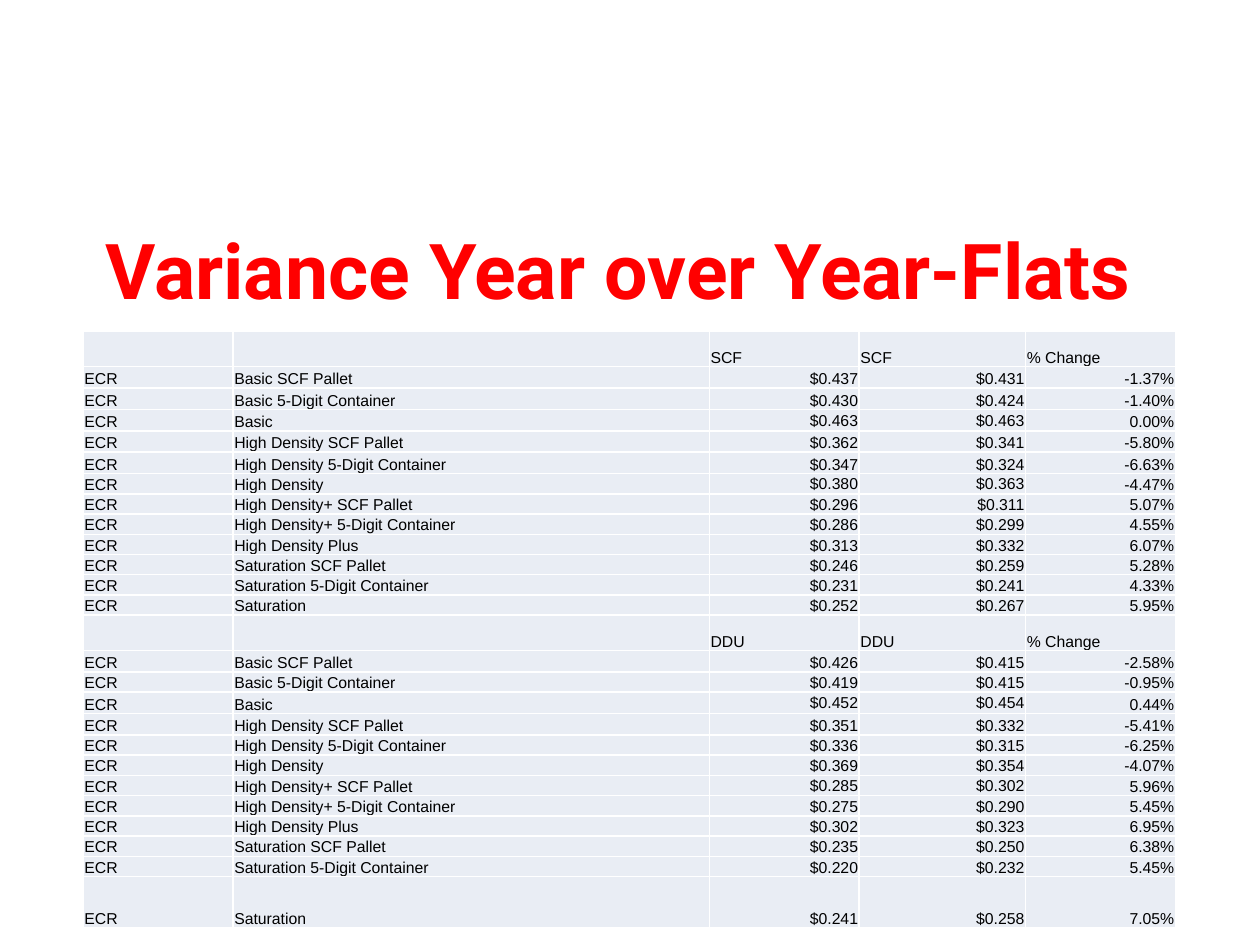
from dataclasses import dataclass

from lxml import etree
from pptx import Presentation
from pptx.dml.color import RGBColor
from pptx.enum.text import MSO_ANCHOR, PP_ALIGN
from pptx.oxml.ns import qn
from pptx.util import Inches, Pt

LEFT, CENTER, RIGHT = PP_ALIGN.LEFT, PP_ALIGN.CENTER, PP_ALIGN.RIGHT
MIDDLE, BOTTOM = MSO_ANCHOR.MIDDLE, MSO_ANCHOR.BOTTOM


@dataclass(frozen=True)
class Theme:
    title_font: str = "Roboto"
    title_size: int = 44
    title_color: str = "FF0000"
    body_font: str = "Arial"
    body_size: int = 9
    body_color: str = "000000"
    cell_fill: str = "E9EDF4"
    border_color: str = "FFFFFF"
    border_width: int = 1


THEME = Theme()

# Rate categories, in the order used by both sections
CATEGORIES = [
    "Basic SCF Pallet", "Basic 5-Digit Container", "Basic",
    "High Density SCF Pallet", "High Density 5-Digit Container", "High Density",
    "High Density+ SCF Pallet", "High Density+ 5-Digit Container", "High Density Plus",
    "Saturation SCF Pallet", "Saturation 5-Digit Container", "Saturation",
]
MIDDLE_PRICED = {"Basic", "High Density", "High Density+ SCF Pallet"}

# Entry point: (last year's price, this year's price) for each category
PRICES = {
    "SCF": [(0.437, 0.431), (0.430, 0.424), (0.463, 0.463), (0.362, 0.341),
            (0.347, 0.324), (0.380, 0.363), (0.296, 0.311), (0.286, 0.299),
            (0.313, 0.332), (0.246, 0.259), (0.231, 0.241), (0.252, 0.267)],
    "DDU": [(0.426, 0.415), (0.419, 0.415), (0.452, 0.454), (0.351, 0.332),
            (0.336, 0.315), (0.369, 0.354), (0.285, 0.302), (0.275, 0.290),
            (0.302, 0.323), (0.235, 0.250), (0.220, 0.232), (0.241, 0.258)],
}

COLUMN_WIDTHS = [1.19, 3.78, 1.19, 1.32, 1.19]
HEADER, TALL, SHORT, LAST = 0.28, 0.17, 0.15, 0.41
ROW_HEIGHTS = ([HEADER] + [TALL] * 5 + [SHORT] * 7
               + [HEADER, TALL, SHORT, TALL, TALL] + [SHORT] * 7 + [LAST])


def style_font(font, name, size, color, bold=False):
    font.name = name
    font.size = Pt(size)
    font.bold = bold
    font.color.rgb = RGBColor.from_string(color)


def add_title(slide, text):
    title = slide.shapes.add_textbox(Inches(0.16), Inches(1.61), Inches(9.5), Inches(1.04))
    frame = title.text_frame
    frame.word_wrap = True
    frame.vertical_anchor = MIDDLE
    paragraph = frame.paragraphs[0]
    paragraph.text = text
    paragraph.alignment = CENTER
    style_font(paragraph.font, THEME.title_font, THEME.title_size, THEME.title_color, bold=True)


def add_borders(cell):
    properties = cell._tc.get_or_add_tcPr()
    for position, side in enumerate(("lnL", "lnR", "lnT", "lnB")):
        line = etree.Element(qn(f"a:{side}"), w=str(Pt(THEME.border_width)))
        fill = etree.SubElement(line, qn("a:solidFill"))
        etree.SubElement(fill, qn("a:srgbClr"), val=THEME.border_color)
        properties.insert(position, line)


def fill_cell(cell, text, alignment, anchor):
    cell.margin_left = cell.margin_right = cell.margin_top = Inches(0.01)
    cell.margin_bottom = 0
    cell.vertical_anchor = anchor
    cell.fill.solid()
    cell.fill.fore_color.rgb = RGBColor.from_string(THEME.cell_fill)
    add_borders(cell)
    paragraph = cell.text_frame.paragraphs[0]
    if text:
        paragraph.text = text
    else:
        # An empty cell takes its line height from the end mark
        etree.SubElement(paragraph._p, qn("a:endParaRPr"), sz=str(THEME.body_size * 100))
    paragraph.alignment = alignment
    style_font(paragraph.font, THEME.body_font, THEME.body_size, THEME.body_color)


def rate_rows():
    """Yield each table row as a list of (text, alignment, anchor)."""
    for entry, prices in PRICES.items():
        yield [(text, LEFT, BOTTOM) for text in ("", "", entry, entry, "% Change")]
        for category, (before, after) in zip(CATEGORIES, prices):
            price_anchor = MIDDLE if category in MIDDLE_PRICED else BOTTOM
            yield [
                ("ECR", LEFT, BOTTOM),
                (category, LEFT, BOTTOM),
                (f"${before:.3f}", RIGHT, price_anchor),
                (f"${after:.3f}", RIGHT, price_anchor),
                (f"{after / before - 1:.2%}", RIGHT, BOTTOM),
            ]


def add_rate_table(slide):
    rates = slide.shapes.add_table(
        len(ROW_HEIGHTS), len(COLUMN_WIDTHS), Inches(0.66), Inches(2.63),
        Inches(sum(COLUMN_WIDTHS)), Inches(sum(ROW_HEIGHTS))).table
    rates.first_row = rates.horz_banding = False
    for column, width in zip(rates.columns, COLUMN_WIDTHS):
        column.width = Inches(width)
    for row, height, entries in zip(rates.rows, ROW_HEIGHTS, rate_rows()):
        row.height = Inches(height)
        for cell, entry in zip(row.cells, entries):
            fill_cell(cell, *entry)


def main():
    prs = Presentation()
    prs.slide_width, prs.slide_height = Inches(10), Inches(7.5)
    slide = prs.slides.add_slide(prs.slide_layouts[6])
    add_title(slide, "Variance Year over Year-Flats")
    add_rate_table(slide)
    prs.save("out.pptx")


if __name__ == "__main__":
    main()
